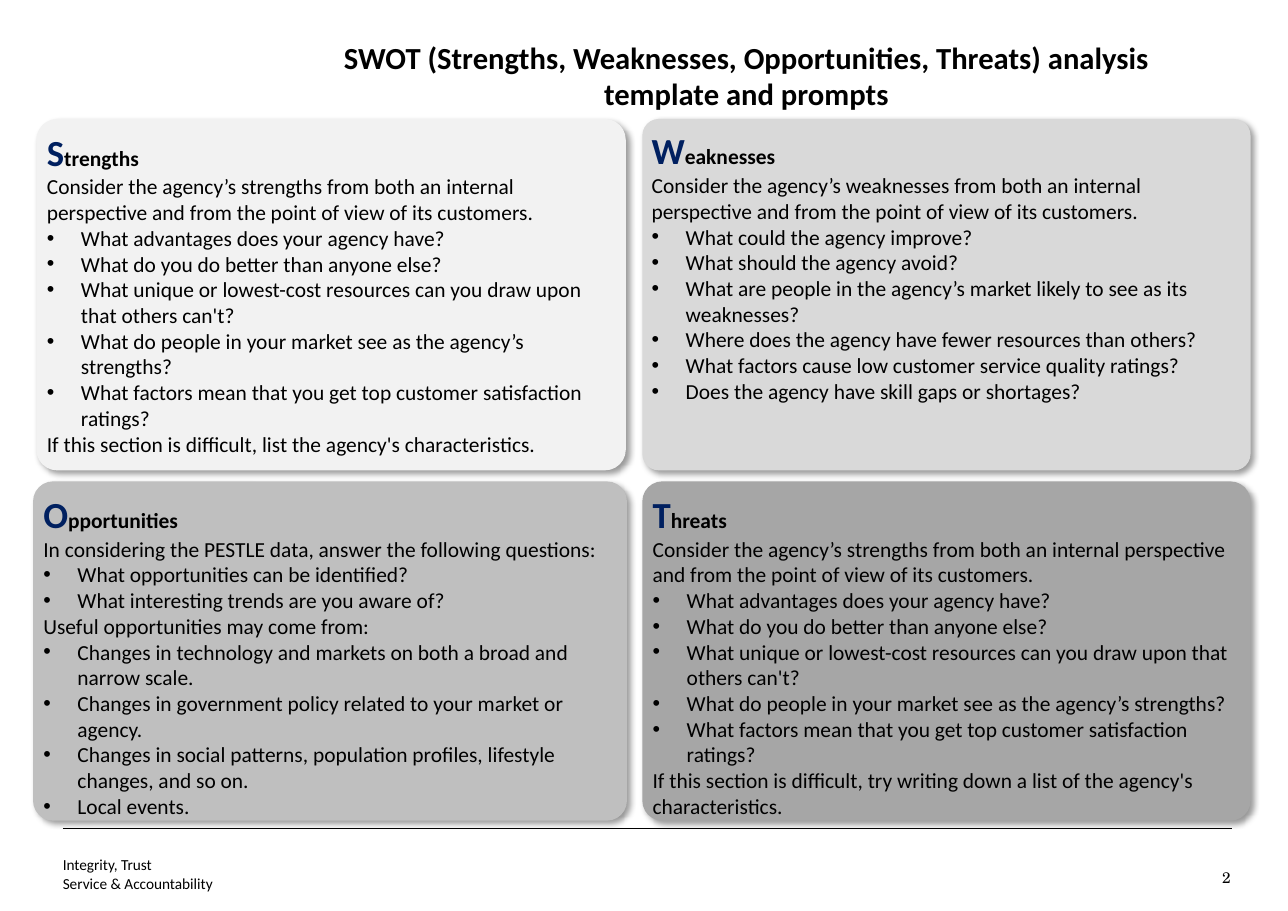
from lxml import etree
from pptx import Presentation, util as u
from pptx.dml.color import RGBColor
from pptx.enum import shapes, text
from pptx.oxml.ns import qn

BLACK, NAVY = "000000", "002060"
TOP, LEFT = text.MSO_ANCHOR.TOP, text.PP_ALIGN.LEFT


def rgb(value):
    return RGBColor.from_string(value)


class Deck:
    font = "Calibri"

    def __init__(self, width, height):
        self.prs = Presentation()
        self.prs.slide_width = u.Inches(width)
        self.prs.slide_height = u.Inches(height)
        self.slide = self.prs.slides.add_slide(self.prs.slide_layouts[5])

    def frame(self, sp, insets, anchor=TOP):
        tf = sp.text_frame
        tf.word_wrap = True
        tf.auto_size = text.MSO_AUTO_SIZE.NONE
        tf.vertical_anchor = anchor
        tf.margin_left = tf.margin_right = u.Inches(insets[0])
        tf.margin_top = tf.margin_bottom = u.Inches(insets[1])
        return tf

    def run(self, p, words, size, color=BLACK, bold=False, font=None):
        r = p.add_run()
        r.text = words
        r.font.size = u.Pt(size)
        r.font.name = font or self.font
        r.font.bold = bold
        r.font.color.rgb = rgb(color)

    def title(self, words, *box):
        sp = self.slide.shapes.title
        sp.left, sp.top, sp.width, sp.height = map(u.Inches, box)
        p = self.frame(sp, (0.11, 0.06)).paragraphs[0]
        p.alignment = text.PP_ALIGN.CENTER
        self.run(p, words, 20, bold=True)

    def label(self, lines, *box, align=LEFT, anchor=TOP, font=None):
        sp = self.slide.shapes.add_textbox(*map(u.Inches, box))
        p = self.frame(sp, (0, 0), anchor).paragraphs[0]
        p.alignment = align
        for i, line in enumerate(lines):
            if i:
                p.add_line_break()
            self.run(p, line, 10, font=font)

    def rule(self, x1, x2, y):
        line = self.slide.shapes.add_connector(
            shapes.MSO_CONNECTOR.STRAIGHT, *map(u.Inches, (x1, y, x2, y)))
        line.line.color.rgb = rgb(BLACK)
        line.line.width = u.Pt(0.5)
        etree.SubElement(line._element.spPr, qn("a:effectLst"))

    def shadow(self, sp):
        sp.shadow.inherit = False
        effects = sp._element.spPr.find(qn("a:effectLst"))
        outer = etree.SubElement(
            effects, qn("a:outerShdw"), blurRad=str(u.Pt(4)), dist=str(u.Pt(3)),
            dir="2700000", algn="tl", rotWithShape="0")
        color = etree.SubElement(outer, qn("a:srgbClr"), val=BLACK)
        etree.SubElement(color, qn("a:alpha"), val="40000")

    def bullet(self, p):
        pPr = p._p.get_or_add_pPr()
        pPr.set("marL", str(u.Inches(0.31)))
        pPr.set("indent", str(-u.Inches(0.31)))
        etree.SubElement(pPr, qn("a:buFont"), typeface="Arial")
        etree.SubElement(pPr, qn("a:buChar"), char="•")

    def panel(self, heading, lines, fill, radius, *box):
        sp = self.slide.shapes.add_shape(
            shapes.MSO_SHAPE.ROUNDED_RECTANGLE, *map(u.Inches, box))
        sp.adjustments[0] = radius
        sp.fill.solid()
        sp.fill.fore_color.rgb = rgb(fill)
        sp.line.fill.background()
        self.shadow(sp)
        tf = self.frame(sp, (0.04, 0.04))
        p = tf.paragraphs[0]
        p.alignment = LEFT
        self.run(p, heading[0], 24, NAVY, bold=True)
        self.run(p, heading[1:], 14, bold=True)
        for line in lines:
            p = tf.add_paragraph()
            p.alignment = LEFT
            if line.startswith("• "):
                self.bullet(p)
            self.run(p, line.removeprefix("• "), 14)


STRENGTH_PROMPTS = [
    "Consider the agency’s strengths from both an internal perspective and from the point of view of its customers.",
    "• What advantages does your agency have?",
    "• What do you do better than anyone else?",
    "• What unique or lowest-cost resources can you draw upon that others can't?",
    "• What do people in your market see as the agency’s strengths?",
    "• What factors mean that you get top customer satisfaction ratings?",
]
STRENGTHS = STRENGTH_PROMPTS + [
    "If this section is difficult, list the agency's characteristics.",
]
WEAKNESSES = [
    "Consider the agency’s weaknesses from both an internal perspective and from the point of view of its customers.",
    "• What could the agency improve?",
    "• What should the agency avoid?",
    "• What are people in the agency’s market likely to see as its weaknesses?",
    "• Where does the agency have fewer resources than others?",
    "• What factors cause low customer service quality ratings?",
    "• Does the agency have skill gaps or shortages?",
]
OPPORTUNITIES = [
    "In considering the PESTLE data, answer the following questions:",
    "• What opportunities can be identified?",
    "• What interesting trends are you aware of?",
    "Useful opportunities may come from:",
    "• Changes in technology and markets on both a broad and narrow scale.",
    "• Changes in government policy related to your market or agency.",
    "• Changes in social patterns, population profiles, lifestyle changes, and so on.",
    "• Local events.",
]
THREATS = STRENGTH_PROMPTS + [
    "If this section is difficult, try writing down a list of the agency's characteristics.",
]


def main():
    deck = Deck(11.69, 8.27)
    deck.rule(0.57, 11.18, 7.52)
    deck.label(["2"], 10.96, 7.88, 0.21, 0.17,
               align=text.PP_ALIGN.RIGHT, font="TeX Gyre Schola")
    deck.title("SWOT (Strengths, Weaknesses, Opportunities, Threats) analysis template and prompts",
               2.7, 0.29, 8.15, 0.73)
    upper, lower = (1.08, 3.19), (4.37, 3.08)
    for heading, lines, fill, radius, x, w, (y, h) in [
        ("Strengths", STRENGTHS, "F2F2F2", 0.059, 0.33, 5.35, upper),
        ("Weaknesses", WEAKNESSES, "D9D9D9", 0.047, 5.83, 5.52, upper),
        ("Opportunities", OPPORTUNITIES, "BFBFBF", 0.059, 0.3, 5.39, lower),
        ("Threats", THREATS, "A6A6A6", 0.059, 5.83, 5.52, lower),
    ]:
        deck.panel(heading, lines, fill, radius, x, y, w, h)
    deck.label(["Integrity, Trust", "Service & Accountability"],
               0.57, 7.66, 3.7, 0.44, anchor=text.MSO_ANCHOR.BOTTOM)
    deck.prs.save("out.pptx")


if __name__ == "__main__":
    main()
